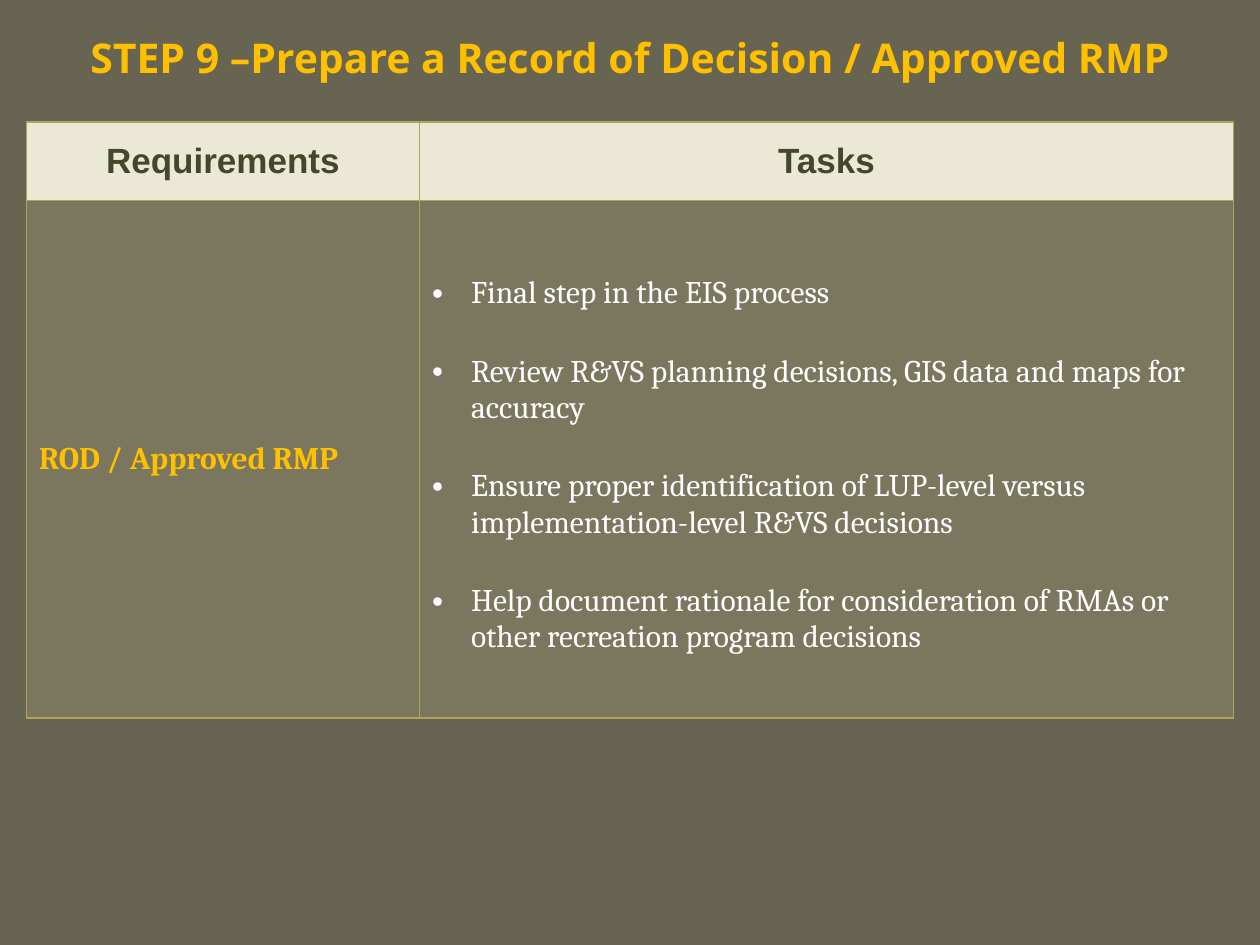
"""Build the Step 9 slide: a title above a table of requirements and tasks."""
from dataclasses import dataclass

import pptx
import pptx.dml.color
import pptx.enum.text
import pptx.oxml
import pptx.oxml.ns
import pptx.util

Inches = pptx.util.Inches
Pt = pptx.util.Pt
ALIGN = pptx.enum.text.PP_ALIGN
MIDDLE = pptx.enum.text.MSO_ANCHOR.MIDDLE


@dataclass
class Theme:
    background: str = "676451"
    accent: str = "FFC000"
    header_fill: str = "EBE8D5"
    header_text: str = "45472B"
    body_fill: str = "CEC597"
    body_text: str = "FFFFFF"
    border: str = "B1A35A"
    title_size: float = 23.4
    header_size: float = 20
    body_size: float = 18


theme = Theme()


def add_text(p, text, font, size, color, bold=True):
    r = p.add_run()
    r.text = text
    r.font.name = font
    r.font.size = Pt(size)
    r.font.bold = bold
    r.font.color.rgb = pptx.dml.color.RGBColor.from_string(color)


def style_cell(cell, color, alpha=100):
    cell.vertical_anchor = MIDDLE
    tcPr = cell._tc.get_or_add_tcPr()
    for side in ("lnL", "lnR", "lnT", "lnB"):
        tcPr.append(pptx.oxml.parse_xml(
            f'<a:{side} {pptx.oxml.ns.nsdecls("a")} w="{Pt(1)}">'
            f'<a:solidFill><a:srgbClr val="{theme.border}"/></a:solidFill></a:{side}>'))
    cell.fill.solid()
    cell.fill.fore_color.rgb = pptx.dml.color.RGBColor.from_string(color)
    if alpha < 100:
        srgb = tcPr.find(pptx.oxml.ns.qn("a:solidFill"))[0]
        srgb.append(pptx.oxml.parse_xml(
            f'<a:alpha {pptx.oxml.ns.nsdecls("a")} val="{alpha * 1000}"/>'))


prs = pptx.Presentation()
prs.slide_width, prs.slide_height = Inches(10), Inches(7.5)
s = prs.slides.add_slide(prs.slide_layouts[6])
s.background.fill.solid()
s.background.fill.fore_color.rgb = pptx.dml.color.RGBColor.from_string(theme.background)

title = s.shapes.add_textbox(Inches(0), Inches(0.08), Inches(10), Inches(0.75))
tf = title.text_frame
tf.word_wrap = True
tf.vertical_anchor = MIDDLE
p = tf.paragraphs[0]
p.alignment = ALIGN.CENTER
add_text(p, "STEP 9 –Prepare a Record of Decision / Approved RMP",
         "Open Sans", theme.title_size, theme.accent)

table = s.shapes.add_table(2, 2, Inches(0.21), Inches(0.97), Inches(9.58), Inches(4.73)).table
for column, width in zip(table.columns, (3.12, 6.46)):
    column.width = Inches(width)
for row, height in zip(table.rows, (0.62, 4.11)):
    row.height = Inches(height)

for col, heading in enumerate(("Requirements", "Tasks")):
    cell = table.cell(0, col)
    style_cell(cell, theme.header_fill)
    p = cell.text_frame.paragraphs[0]
    p.alignment = ALIGN.CENTER
    add_text(p, heading, "Arial", theme.header_size, theme.header_text)
    style_cell(table.cell(1, col), theme.body_fill, 20)

requirement = table.cell(1, 0).text_frame.paragraphs[0]
add_text(requirement, "ROD / Approved RMP", "Cambria", theme.body_size, theme.accent)

tasks = (
    "Final step in the EIS process",
    "Review R&VS planning decisions, GIS data and maps for accuracy",
    "Ensure proper identification of LUP-level versus implementation-level R&VS decisions",
    "Help document rationale for consideration of RMAs or other recreation program decisions",
)
cell = table.cell(1, 1)
cell.margin_top = Inches(0.15)
tf = cell.text_frame
for i, task in enumerate(tasks):
    p = tf.add_paragraph() if i else tf.paragraphs[0]
    pPr = p._p.get_or_add_pPr()
    pPr.set("marL", str(Inches(0.31)))
    pPr.set("indent", str(-Inches(0.31)))
    for bullet in ('buFont typeface="Arial"', 'buChar char="•"'):
        tag, attribute = bullet.split(" ")
        pPr.append(pptx.oxml.parse_xml(
            f'<a:{tag} {pptx.oxml.ns.nsdecls("a")} {attribute}/>'))
    p.space_before = Pt(24 if i else 0)
    add_text(p, task, "Cambria", theme.body_size, theme.body_text, bold=False)

prs.save("out.pptx")
